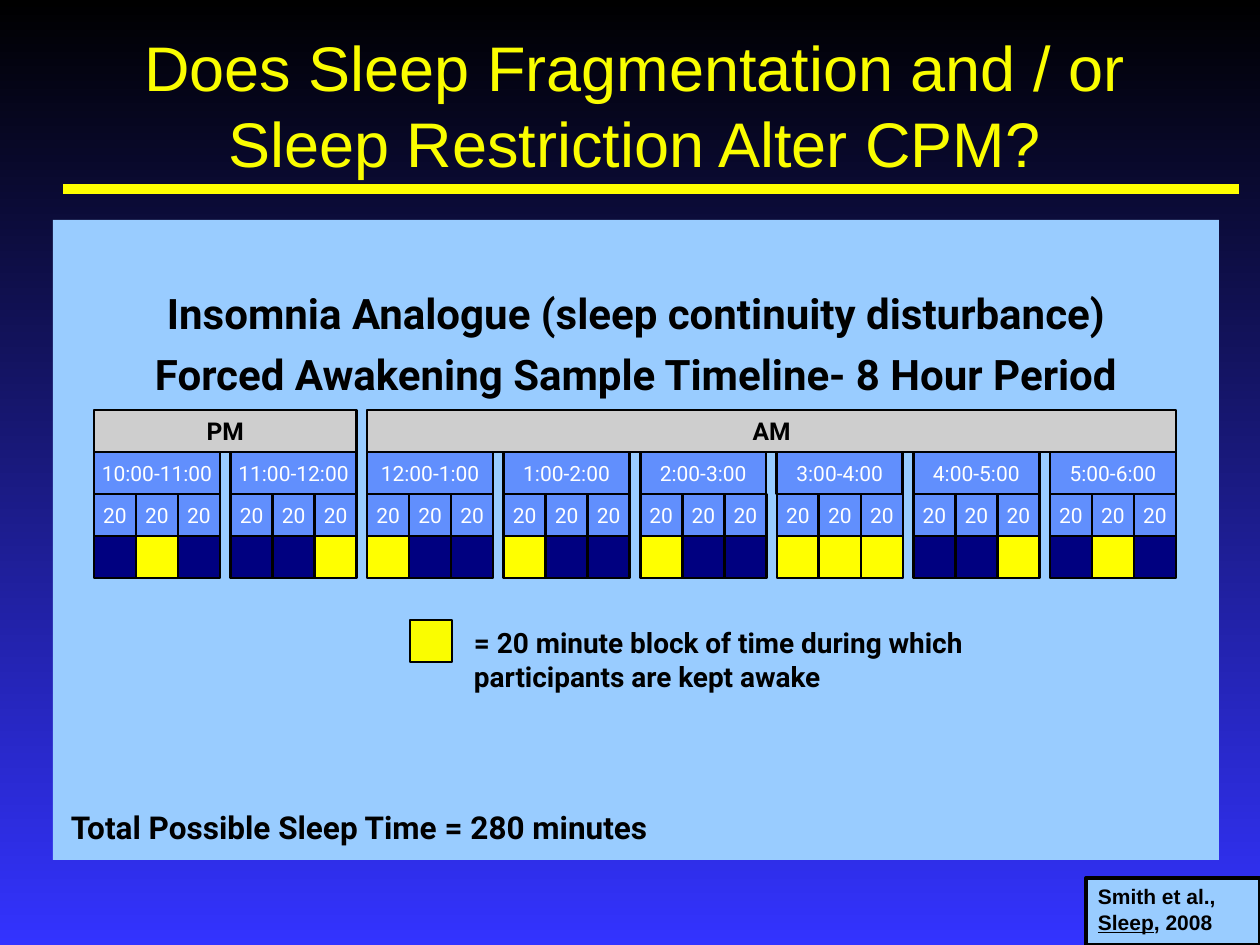
import pptx
import pptx.util
import pptx.dml.color
import pptx.enum.shapes
import pptx.enum.text
import pptx.oxml.ns
import lxml.etree

RGB = pptx.dml.color.RGBColor
BLACK, WHITE = RGB(0, 0, 0), RGB(0xFF, 0xFF, 0xFF)
BLUE, NAVY = RGB(0x33, 0x33, 0xFF), RGB(0, 0, 0x80)
PANEL, HOUR_FILL, GREY = RGB(0x99, 0xCC, 0xFF), RGB(0x61, 0x8F, 0xFD), RGB(0xCE, 0xCE, 0xCE)
YELLOW, LEMON = RGB(0xFF, 0xFF, 0), RGB(0xFA, 0xFD, 0)

# Content: A marks a block kept awake, s a block of possible sleep
TITLE = "Does Sleep Fragmentation and / or Sleep Restriction Alter CPM?"
HEADINGS = ["Insomnia Analogue (sleep continuity disturbance)",
            "Forced Awakening Sample Timeline- 8 Hour Period"]
HOURS = [("10:00-11:00", "sAs"), ("11:00-12:00", "ssA"),
         ("12:00-1:00", "Ass"), ("1:00-2:00", "Ass"),
         ("2:00-3:00", "Ass"), ("3:00-4:00", "AAA"),
         ("4:00-5:00", "ssA"), ("5:00-6:00", "sAs")]
HALVES = [("PM", 0, 1), ("AM", 2, 7)]  # label, first hour, last hour
BLOCK_MINUTES = "20"
LEGEND = "= 20 minute block of time during which participants are kept awake"
TOTAL = "Total Possible Sleep Time = 280 minutes"
CITATION = [("Smith et al., ", {}), ("Sleep", {"underline": True}), (", 2008", {})]

# Layout in px, 126 to the inch
SCALE = 914400 / 126
CELL = 42
HOUR_WIDTH = 3 * CELL
FIRST_LEFT, LAST_LEFT = 94, 1050
PITCH = (LAST_LEFT - FIRST_LEFT) / (len(HOURS) - 1)
HALF_TOP, HOUR_TOP, MINUTE_TOP, STATE_TOP = (410 + CELL * row for row in range(4))

HEAD = {"name": "Roboto", "size": 24, "bold": True, "color": BLACK}
HALF = {**HEAD, "size": 14}
NOTE = {**HEAD, "size": 16}
SUM = {**HEAD, "size": 18}
CELL_TEXT = {"name": "Roboto", "size": 12, "color": WHITE}
TITLE_TEXT = {"name": "Arial", "size": 36, "color": LEMON}
CITE = {"name": "Arial", "size": 12, "bold": True, "color": BLACK}

ALIGN = pptx.enum.text.PP_ALIGN
ANCHOR = pptx.enum.text.MSO_ANCHOR


def px(value):
    return pptx.util.Emu(round(value * SCALE))


def write(box, paragraphs, style, align=ALIGN.LEFT, anchor=ANCHOR.TOP,
          wrap=True, margins=(12, 6, 12, 6), gap=0):
    """Each paragraph is a list of (text, extra format) spans."""
    frame = box.text_frame
    frame.word_wrap = wrap
    frame.vertical_anchor = anchor
    for side, margin in zip(("left", "top", "right", "bottom"), margins):
        setattr(frame, "margin_" + side, px(margin))
    for index, spans in enumerate(paragraphs):
        para = frame.add_paragraph() if index else frame.paragraphs[0]
        para.alignment = align
        para.space_before = pptx.util.Pt(gap if index else 0)
        for text, extra in spans:
            span = para.add_run()
            span.text = text
            for key, value in {**style, **extra}.items():
                if key == "color":
                    span.font.color.rgb = value
                else:
                    setattr(span.font, key, pptx.util.Pt(value) if key == "size" else value)


def add_box(page, left, top, width, height, fill, line=1.5):
    box = page.shapes.add_shape(pptx.enum.shapes.MSO_SHAPE.RECTANGLE,
                                px(left), px(top), px(width), px(height))
    box.shadow.inherit = False
    box.fill.solid()
    box.fill.fore_color.rgb = fill
    if line:
        box.line.color.rgb = BLACK
        box.line.width = pptx.util.Pt(line)
    else:
        box.line.fill.background()
    return box


def add_cell(page, left, top, width, fill, text, style):
    box = add_box(page, left, top, width, CELL, fill)
    write(box, [[(text, {})]], style, ALIGN.CENTER, ANCHOR.MIDDLE, False, (0, 0, 0, 0))


def add_text(page, left, top, width, height, text, style, **layout):
    box = page.shapes.add_textbox(px(left), px(top), px(width), px(height))
    write(box, [[(text, {})]], style, **layout)


def hour_left(index):
    return FIRST_LEFT + index * PITCH


def main():
    deck = pptx.Presentation()
    deck.slide_width, deck.slide_height = px(1260), px(945)
    page = deck.slides.add_slide(deck.slide_layouts[6])

    # Background
    backdrop = page.background.fill
    backdrop.gradient()
    backdrop.gradient_angle = 270
    for stop, color in zip(backdrop.gradient_stops, (BLACK, BLUE)):
        stop.color.rgb = color

    # Panel with headings
    panel = add_box(page, 53, 220, 1166, 640, PANEL, line=0)
    write(panel, [[(text, {})] for text in HEADINGS], HEAD, ALIGN.CENTER,
          margins=(12, 68, 12, 6), gap=5.6)

    # Timeline
    for label, first, last in HALVES:
        left = hour_left(first)
        add_cell(page, left, HALF_TOP, hour_left(last) + HOUR_WIDTH - left, GREY, label, HALF)
    for index, (label, states) in enumerate(HOURS):
        left = hour_left(index)
        add_cell(page, left, HOUR_TOP, HOUR_WIDTH, HOUR_FILL, label, CELL_TEXT)
        for block, state in enumerate(states):
            block_left = left + block * CELL
            add_cell(page, block_left, MINUTE_TOP, CELL, HOUR_FILL, BLOCK_MINUTES, CELL_TEXT)
            add_box(page, block_left, STATE_TOP, CELL, CELL, YELLOW if state == "A" else NAVY)

    # Legend and total
    add_box(page, 410, 620, CELL, CELL, LEMON)
    add_text(page, 462, 620, 661, 81, LEGEND, NOTE)
    add_text(page, 59, 802, 680, 50, TOTAL, SUM)

    # Title and rule
    add_text(page, 99, 25, 1071, 158, TITLE, TITLE_TEXT,
             align=ALIGN.CENTER, anchor=ANCHOR.MIDDLE)
    rule = page.shapes.add_connector(pptx.enum.shapes.MSO_CONNECTOR.STRAIGHT,
                                     px(63), px(189), px(1239), px(189))
    rule.line.color.rgb = YELLOW
    rule.line.width = pptx.util.Pt(5.25)
    lxml.etree.SubElement(rule.element.spPr, pptx.oxml.ns.qn("a:effectLst"))

    # Citation
    write(add_box(page, 1086, 878, 174, 67, PANEL, line=2.25), [CITATION], CITE)

    deck.save("out.pptx")


if __name__ == "__main__":
    main()
